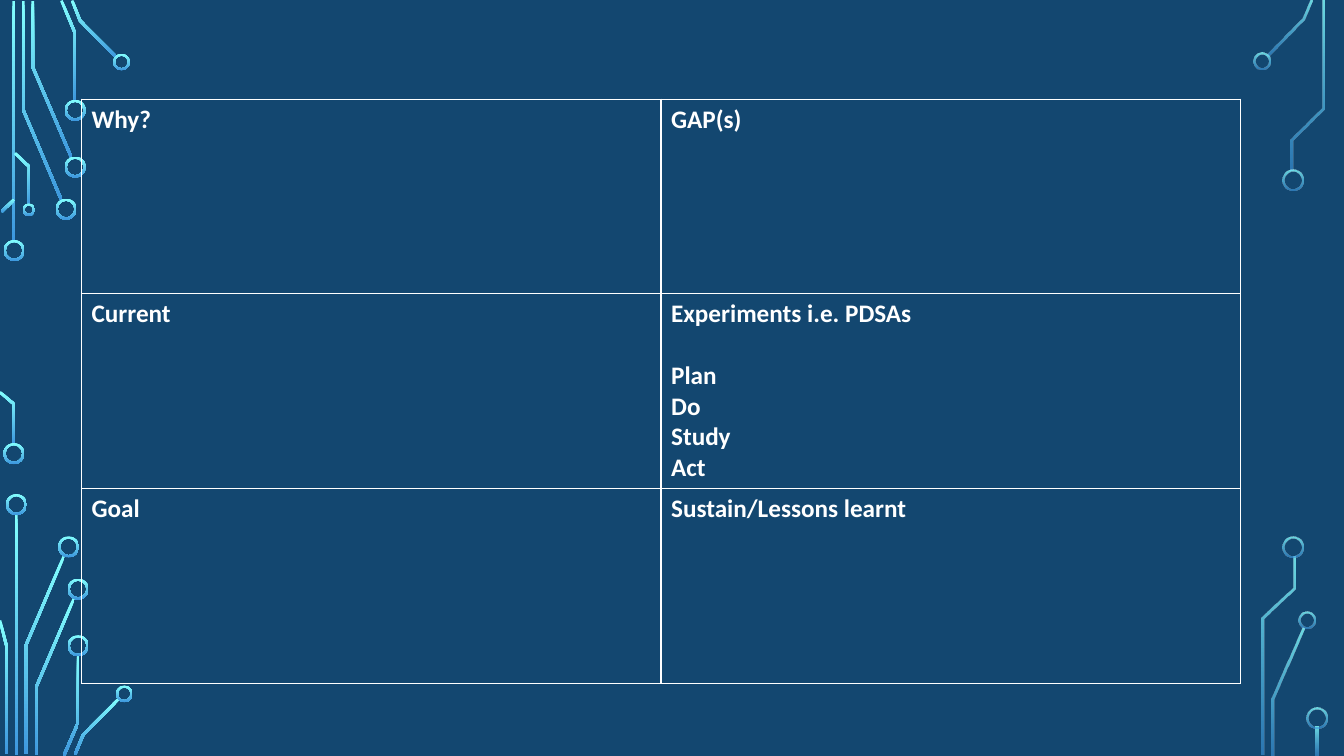
from math import hypot

from lxml import etree
from pptx import Presentation
from pptx.dml.color import RGBColor
from pptx.enum.shapes import MSO_SHAPE
from pptx.oxml.ns import qn
from pptx.util import Pt

BAR = MSO_SHAPE.RECTANGLE
RING = MSO_SHAPE.DONUT

COLORS = {"page": "134770", "glow": "82FFFF", "fade": "3D97DE", "white": "FFFFFF"}
SOLID = (100, 100)
FAINT = (80, 60)
TRACE_WIDTH = 1.9
RING_WIDTH = 1.5

LEFT_BARS = [(9.8, 0.7, 172), (11.7, 367.2, 172)]
LEFT_TRACES = [
    [(16.6, 0.7), (16.6, 78.5), (43.9, 142.9)],
    [(23.4, 0.7), (23.4, 47.9), (51.1, 112.7)],
    [(43.9, 0.4), (53.7, 23.8), (53.7, 72)],
    [(51.5, 0.4), (57.2, 14.8), (83.2, 41)],
    [(1.1, 151.2), (10.1, 142.6)],
    [(0, 280.1), (10.1, 288.7), (10.1, 317.5)],
    [(10.8, 109.4), (20.9, 119.2), (20.9, 146.2)],
    [(18.4, 538.6), (18.4, 461.2), (45.7, 397.1)],
    [(0, 443.2), (4.7, 461.5), (4.7, 538.6)],
    [(25.6, 539.3), (25.6, 491.4), (52.9, 427.3)],
    [(45.7, 539.6), (55.8, 516.2), (55.8, 468)],
    [(53.6, 538.9), (59.4, 524.9), (85, 499)],
]
LEFT_RINGS = [
    (10.1, 178.9, 15), (9.9, 324, 15), (47.2, 149.4, 15), (53.7, 119.3, 15),
    (53.7, 78.8, 15), (86.8, 44.3, 12), (20.6, 149.8, 9), (11.7, 360.4, 15),
    (49, 390.6, 15), (55.8, 420.8, 15), (55.8, 461.2, 15), (88.8, 495.6, 12),
]
RIGHT_BARS = [(940.9, 519.1, 20.2)]
RIGHT_TRACES = [
    [(936.4, 0.4), (930.6, 14), (905, 40)],
    [(909, 539.3), (909, 499.3), (931, 448.9)],
    [(945, 0.7), (945, 77.4), (923, 99.7), (923, 121.7)],
    [(901.8, 539.3), (901.8, 441.7), (924.1, 420.1), (924.1, 397.4)],
]
RIGHT_RINGS = [
    (901.2, 43.6, 12), (923.4, 128.5, 15), (933.5, 443.2, 12),
    (923.8, 390.6, 15), (940.7, 512.6, 15),
]
CIRCUITS = [
    (LEFT_BARS, LEFT_TRACES, LEFT_RINGS, SOLID),
    (RIGHT_BARS, RIGHT_TRACES, RIGHT_RINGS, FAINT),
]
BOARD = [
    ["Why?", "GAP(s)"],
    ["Current", "Experiments i.e. PDSAs\nPlan\nDo\nStudy\nAct"],
    ["Goal", "Sustain/Lessons learnt"],
]


def ribbon(points, width):
    """Return the outline of a mitred band along a centre line."""
    normals = []
    for (x1, y1), (x2, y2) in zip(points, points[1:]):
        length = hypot(x2 - x1, y2 - y1)
        normals.append(((y1 - y2) / length, (x2 - x1) / length))
    near, far = [], []
    for (x, y), (ax, ay), (bx, by) in zip(points, normals[:1] + normals, normals + normals[-1:]):
        reach = width / 2 / (1 + ax * bx + ay * by)
        dx, dy = (ax + bx) * reach, (ay + by) * reach
        near.append((x + dx, y + dy))
        far.append((x - dx, y - dy))
    return near + far[::-1]


class Painter:
    """Draws the elements of a page in one shared style."""

    def __init__(self, page):
        self.page = page
        self.font = "Calibri"
        self.size = 18
        self.line_gap = 22

    def color(self, name):
        return RGBColor.from_string(COLORS[name])

    def background(self):
        fill = self.page.background.fill
        fill.solid()
        fill.fore_color.rgb = self.color("page")

    def glow(self, shape, opacity):
        shape.shadow.inherit = False
        shape.line.fill.background()
        shape.fill.gradient()
        shape.fill.gradient_angle = 270
        for stop, name in zip(shape.fill.gradient_stops, ("glow", "fade")):
            stop.color.rgb = self.color(name)
        for tint, percent in zip(shape._element.spPr.iter(qn("a:srgbClr")), opacity):
            if percent < 100:
                etree.SubElement(tint, qn("a:alpha"), val=str(percent * 1000))

    def bar(self, center, top, height, opacity):
        left = center - TRACE_WIDTH / 2
        shape = self.page.shapes.add_shape(BAR, Pt(left), Pt(top), Pt(TRACE_WIDTH), Pt(height))
        self.glow(shape, opacity)

    def trace(self, points, opacity):
        outline = [(Pt(x), Pt(y)) for x, y in ribbon(points, TRACE_WIDTH)]
        builder = self.page.shapes.build_freeform(*outline[0])
        builder.add_line_segments(outline[1:], close=True)
        self.glow(builder.convert_to_shape(), opacity)

    def ring(self, x, y, size, opacity):
        shape = self.page.shapes.add_shape(
            RING, Pt(x - size / 2), Pt(y - size / 2), Pt(size), Pt(size))
        shape.adjustments[0] = RING_WIDTH / size
        self.glow(shape, opacity)

    def cell(self, cell, text):
        cell.fill.background()
        properties = cell._tc.get_or_add_tcPr()
        for index, side in enumerate(("lnL", "lnR", "lnT", "lnB")):
            border = etree.Element(qn(f"a:{side}"), w=str(Pt(1)))
            paint = etree.SubElement(border, qn("a:solidFill"))
            etree.SubElement(paint, qn("a:srgbClr"), val=COLORS["white"])
            properties.insert(index, border)
        cell.text_frame.text = text
        for number, para in enumerate(cell.text_frame.paragraphs):
            if number == 1:
                para.space_before = Pt(self.line_gap)
            for span in para.runs:
                span.font.name = self.font
                span.font.size = Pt(self.size)
                span.font.bold = True
                span.font.color.rgb = self.color("white")

    def table(self, rows, left, top, column_width, row_height):
        count = len(rows[0])
        table = self.page.shapes.add_table(
            len(rows), count, Pt(left), Pt(top),
            Pt(column_width * count), Pt(row_height * len(rows))).table
        table.first_row = False
        table.horz_banding = False
        for row, texts in enumerate(rows):
            for column, text in enumerate(texts):
                self.cell(table.cell(row, column), text)


def main():
    deck = Presentation()
    deck.slide_width, deck.slide_height = Pt(960), Pt(540)
    painter = Painter(deck.slides.add_slide(deck.slide_layouts[6]))
    painter.background()
    for bars, traces, rings, opacity in CIRCUITS:
        for bar in bars:
            painter.bar(*bar, opacity)
        for points in traces:
            painter.trace(points, opacity)
        for ring in rings:
            painter.ring(*ring, opacity)
    painter.table(BOARD, 58.2, 70.8, 414, 139.1)
    deck.save("out.pptx")


if __name__ == "__main__":
    main()
